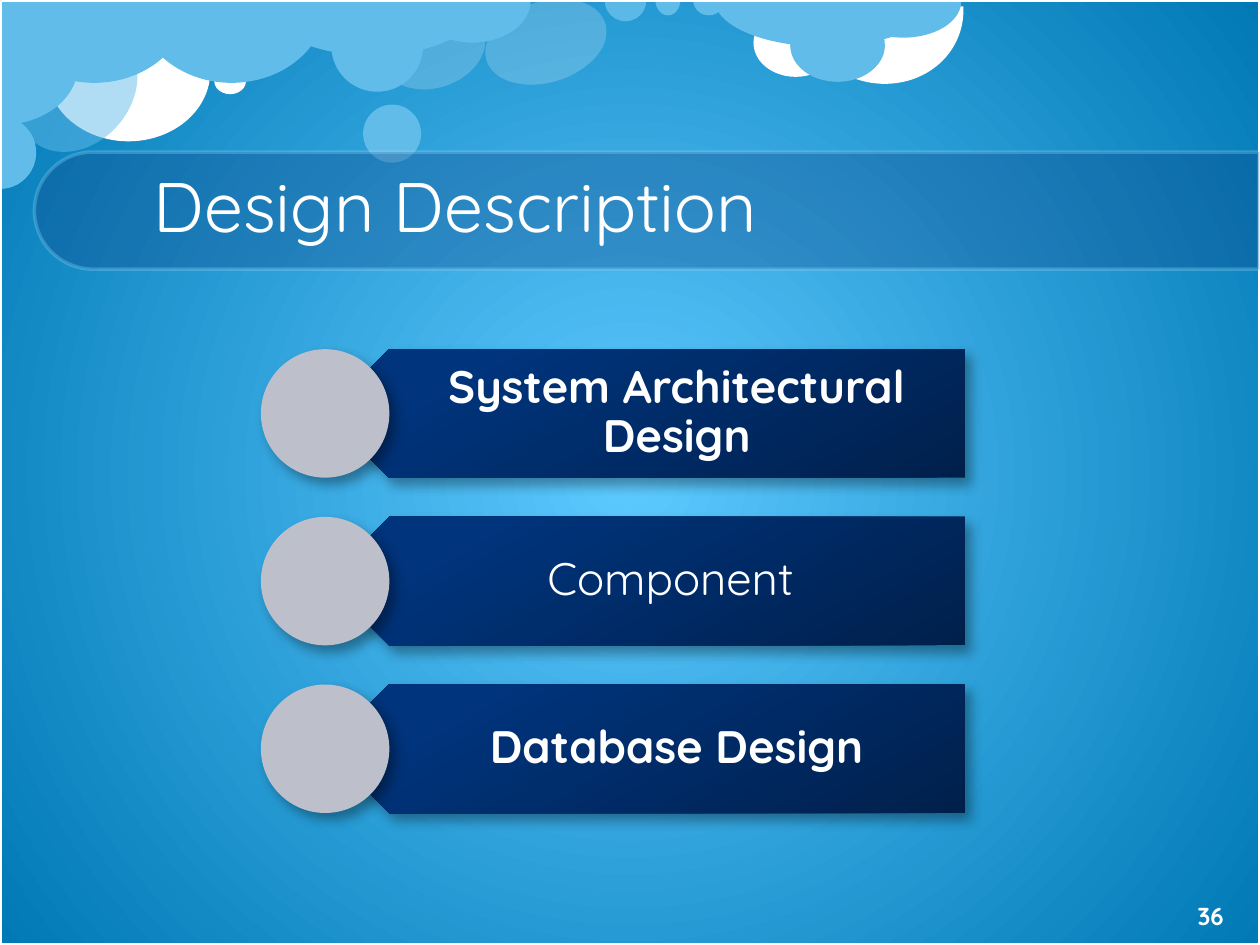
from lxml import etree
from pptx import Presentation
from pptx.dml.color import RGBColor
from pptx.enum.shapes import MSO_SHAPE as Geo
from pptx.enum.text import MSO_ANCHOR as Anchor, PP_ALIGN as Align
from pptx.oxml.ns import qn
from pptx.util import Cm, Pt

COLORS = {
    "white": "FFFFFF", "cloud": "62BCE9", "mist": "8FD9FB", "band": "073779",
    "glow": "5DC9FF", "sky": "0079B5", "night": "00204C", "navy": "00347C",
    "disc": "BDBFCB", "shade": "000000",
}

HALF = (0, 108)
CLOUDS = [
    (Geo.OVAL, (7.9, -0.13, 1.63, 2.18), "white", 20, 72.8, ()),
    (Geo.OVAL, (0.94, 0.03, 3.3, 2.82), "white", 100, 0, ()),
    (Geo.ARC, (16.23, -1.52, 3.07, 3.33), "white", 100, 106.5, (151.8, 44.48)),
    (Geo.OVAL, (15.19, 0.18, 1.7, 1.37), "white", 100, 0, ()),
    (Geo.PIE, (-0.03, -1.68, 3.86, 3.35), "cloud", 100, 0, HALF),
    (Geo.PIE, (5.28, -1.12, 4.45, 2.24), "cloud", 100, 0, HALF),
    (Geo.OVAL, (7.32, 2.11, 1.17, 1.17), "cloud", 100, 0, ()),
    (Geo.OVAL, (0.48, 0.46, 2.16, 2.72), "cloud", 50, 41.8, ()),
    (Geo.PIE, (-0.74, 2.34, 1.47, 1.47), "cloud", 100, 270, HALF),
    (Geo.OVAL, (4.32, 1.37, 0.64, 0.53), "white", 100, 0, ()),
    (Geo.PIE, (2.74, -1.68, 3.86, 3.35), "cloud", 100, 0, HALF),
    (Geo.PIE, (14.4, -0.97, 4.45, 1.91), "cloud", 100, 0, HALF),
    (Geo.OVAL, (15.93, 0.18, 1.91, 1.47), "cloud", 100, 0, ()),
    (Geo.PIE, (17.04, -0.71, 2.34, 1.47), "cloud", 100, 0, HALF),
    (Geo.OVAL, (10.19, -0.41, 1.63, 2.51), "white", 20, 72.8, ()),
    (Geo.PIE, (12.19, -0.41, 0.84, 0.84), "mist", 50, 0, HALF),
    (Geo.PIE, (13.21, -0.33, 0.51, 0.64), "cloud", 100, 0, HALF),
    (Geo.PIE, (13.97, -0.33, 0.64, 0.64), "cloud", 100, 0, HALF),
    (Geo.OVAL, (6.68, 0, 1.85, 1.85), "cloud", 100, 0, ()),
    (Geo.PIE, (8.36, -0.84, 2.34, 1.7), "cloud", 100, 0, HALF),
    (Geo.PIE, (-1.19, -0.23, 2.36, 3.15), "cloud", 100, 270, HALF),
]

TOPICS = [("System Architectural Design", True), ("Component ", False), ("Database Design", True)]
TOPIC_TOP, TOPIC_STEP, TOPIC_HEIGHT = 7.04, 3.38, 2.59


def rgb(name):
    return RGBColor.from_string(COLORS[name])


class Deck:
    font = "Quicksand"

    def __init__(self, slide):
        self.slide = slide

    def paint(self, fill, color, alpha=100):
        fill.solid()
        fill.fore_color.rgb = rgb(color)
        if alpha < 100:
            srgb = fill._xPr.find(".//" + qn("a:srgbClr"))
            etree.SubElement(srgb, qn("a:alpha"), val=str(alpha * 1000))

    def blend(self, fill, *stops):
        fill.gradient()
        for stop, (position, color) in zip(fill.gradient_stops, stops):
            stop.position = position
            stop.color.rgb = rgb(color)

    def background(self):
        fill = self.slide.background.fill
        self.blend(fill, (0, "glow"), (1, "sky"))
        gradient = fill._xPr.find(qn("a:gradFill"))
        gradient.remove(gradient.find(qn("a:lin")))
        circle = etree.SubElement(gradient, qn("a:path"), path="circle")
        etree.SubElement(circle, qn("a:fillToRect"), l="50000", t="50000", r="50000", b="50000")

    def shape(self, geometry, box, color=None, alpha=100, turn=0, adjust=()):
        shape = self.slide.shapes.add_shape(geometry, *map(Cm, box))
        shape.shadow.inherit = False
        shape.rotation = turn
        for index, value in enumerate(adjust):
            shape.adjustments[index] = value
        if color:
            self.paint(shape.fill, color, alpha)
        else:
            shape.fill.background()
        shape.line.fill.background()
        return shape

    def outline(self, shape, color, alpha=100):
        self.paint(shape.line.fill, color, alpha)
        shape.line.width = Pt(2)

    def cast_shadow(self, shape):
        effects = shape._element.spPr.find(qn("a:effectLst"))
        shadow = etree.SubElement(
            effects, qn("a:outerShdw"), blurRad=str(Pt(7)), dist=str(Pt(5)),
            dir=str(50 * 60000), algn="tl", rotWithShape="0")
        srgb = etree.SubElement(shadow, qn("a:srgbClr"), val=COLORS["shade"])
        etree.SubElement(srgb, qn("a:alpha"), val="35000")

    def style_text(self, frame, text, size, bold=False, align=Align.CENTER, spacing=None):
        frame.word_wrap = True
        frame.vertical_anchor = Anchor.MIDDLE
        paragraph = frame.paragraphs[0]
        paragraph.text = text
        paragraph.alignment = align
        paragraph.line_spacing = spacing
        font = paragraph.font
        font.name, font.size, font.bold = self.font, Pt(size), bold
        font.color.rgb = rgb("white")

    def title(self, text, box):
        title = self.slide.shapes.title
        title.left, title.top, title.width, title.height = map(Cm, box)
        self.slide.shapes._spTree.append(title._element)
        self.style_text(title.text_frame, text, 40, align=Align.LEFT, spacing=Pt(56))

    def text(self, text, box, size, bold, spacing=None):
        frame = self.slide.shapes.add_textbox(*map(Cm, box)).text_frame
        self.style_text(frame, text, size, bold, spacing=spacing)
        return frame

    def topic(self, text, bold, top):
        plate = self.shape(Geo.PENTAGON, (6.55, top, 12.9, TOPIC_HEIGHT), "navy", turn=180)
        self.blend(plate.fill, (0, "night"), (0.8, "navy"))
        plate.fill.gradient_angle = 120
        plate.fill._xPr.find(qn("a:gradFill")).set("rotWithShape", "0")
        self.cast_shadow(plate)
        frame = self.text(text, (7.19, top, 12.27, TOPIC_HEIGHT), 26, bold, spacing=0.9)
        frame.margin_left, frame.margin_right = Cm(1.14), Cm(0.5)
        frame.margin_top = frame.margin_bottom = Cm(0.28)
        disc = self.shape(Geo.OVAL, (5.26, top, TOPIC_HEIGHT, TOPIC_HEIGHT), "disc")
        self.cast_shadow(disc)


def main():
    prs = Presentation()
    prs.slide_width, prs.slide_height = Cm(25.4), Cm(19.05)
    deck = Deck(prs.slides.add_slide(prs.slide_layouts[5]))
    deck.background()
    for cloud in CLOUDS:
        deck.shape(*cloud)
    border = deck.shape(Geo.RECTANGLE, (0, 0, 25.4, 19.05))
    deck.outline(border, "white")
    band = deck.shape(Geo.ROUND_2_SAME_RECTANGLE, (11.86, -8.1, 2.36, 24.69),
                      "band", 30, 270, (0.5, 0))
    deck.outline(band, "mist", 30)
    deck.title("Design Description", (2.84, 3, 20.57, 1.98))
    deck.text("36", (23.42, 17.91, 1.98, 1.09), 14, True)
    for row, (text, bold) in enumerate(TOPICS):
        deck.topic(text, bold, TOPIC_TOP + row * TOPIC_STEP)
    prs.save("out.pptx")


if __name__ == "__main__":
    main()
